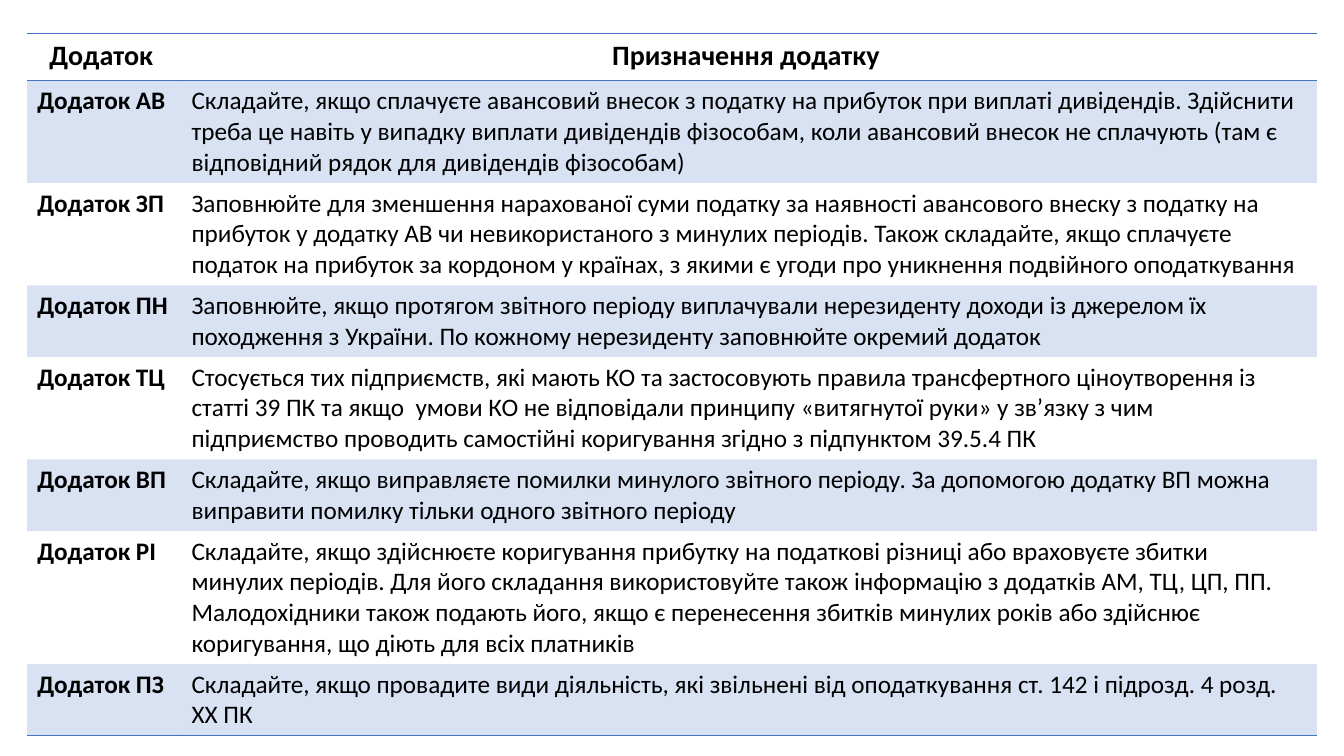
"""Build a one-slide table of tax return annexes and their purposes."""
from dataclasses import dataclass

import lxml.etree
import pptx
import pptx.dml.color
import pptx.enum.text
import pptx.oxml.ns
import pptx.util


@dataclass(frozen=True)
class Theme:
    """Colours, type sizes and table style of the slide."""
    font: str = "Calibri"
    ink: str = "000000"
    accent: str = "4472C4"
    band_alpha: int = 20
    header_size: int = 20
    body_size: int = 18
    rule_width: int = 1
    plain_style: str = "{2D5ABB26-0587-4C30-8999-92F81FD0307C}"


THEME = Theme()
SLIDE_SIZE = (13.33, 7.5)
TABLE_ORIGIN = (0.27, 0.33)
COLUMNS = (1.53, 11.26)
HEADER_HEIGHT = 0.47
LINE_HEIGHT = 0.3
ROW_PADDING = 0.1

HEADERS = ("Додаток ", "Призначення додатку ")
ANNEXES = (
    ("АВ", 3, (
        "Складайте, якщо сплачуєте авансовий внесок з податку на прибуток "
        "при виплаті дивідендів. Здійснити треба це навіть у випадку "
        "виплати дивідендів фізособам, коли авансовий внесок не сплачують "
        "(там є відповідний рядок для дивідендів фізособам)",)),
    ("ЗП", 3, (
        "Заповнюйте для зменшення нарахованої суми податку за наявності "
        "авансового внеску з податку на прибуток у додатку АВ чи "
        "невикористаного з минулих періодів. Також складайте, якщо сплачуєте "
        "податок на прибуток за кордоном у країнах, з якими є угоди про "
        "уникнення подвійного оподаткування",)),
    ("ПН", 2, (
        "Заповнюйте, якщо протягом звітного періоду виплачували нерезиденту "
        "доходи із джерелом їх походження з України. По кожному нерезиденту "
        "заповнюйте окремий додаток",)),
    ("ТЦ", 3, (
        "Стосується тих підприємств, які мають КО та застосовують правила "
        "трансфертного ціноутворення із статті 39 ПК та якщо  умови КО не "
        "відповідали принципу «витягнутої руки» у зв’язку з чим підприємство "
        "проводить самостійні коригування згідно з підпунктом 39.5.4 ПК",)),
    ("ВП", 2, (
        "Складайте, якщо виправляєте помилки минулого звітного періоду. За "
        "допомогою додатку ВП можна виправити помилку тільки одного звітного "
        "періоду",)),
    ("РІ", 4, (
        "Складайте, якщо здійснюєте коригування прибутку на податкові різниці "
        "або враховуєте збитки минулих періодів. Для його складання "
        "використовуйте також інформацію з додатків АМ, ТЦ, ЦП, ПП.",
        "Малодохідники також подають його, якщо є перенесення збитків минулих "
        "років або здійснює коригування, що діють для всіх платників")),
    ("ПЗ", 2, (
        "Складайте, якщо провадите види діяльність, які звільнені від "
        "оподаткування ст. 142 і підрозд. 4 розд. ХХ ПК",)),
)


def write(tf, paragraphs, size=THEME.body_size, bold=False, align="LEFT"):
    """Fill a text frame with formatted paragraphs."""
    for i, text in enumerate(paragraphs):
        p = tf.add_paragraph() if i else tf.paragraphs[0]
        p.alignment = getattr(pptx.enum.text.PP_ALIGN, align)
        r = p.add_run()
        r.text = text
        r.font.name = THEME.font
        r.font.size = pptx.util.Pt(size)
        r.font.bold = bold
        r.font.color.rgb = pptx.dml.color.RGBColor.from_string(THEME.ink)


def add_rule(cell, edge):
    """Draw an accent border on the T or B edge of a cell."""
    qn = pptx.oxml.ns.qn
    ln = lxml.etree.SubElement(cell._tc.get_or_add_tcPr(), qn(f"a:ln{edge}"),
                               w=str(pptx.util.Pt(THEME.rule_width)))
    fill = lxml.etree.SubElement(ln, qn("a:solidFill"))
    lxml.etree.SubElement(fill, qn("a:srgbClr"), val=THEME.accent)


def fill_band(cell, banded):
    """Tint a banded cell with the translucent accent, or leave it clear."""
    if not banded:
        cell.fill.background()
        return
    cell.fill.solid()
    cell.fill.fore_color.rgb = pptx.dml.color.RGBColor.from_string(THEME.accent)
    qn = pptx.oxml.ns.qn
    colour = cell._tc.tcPr.find(f"{qn('a:solidFill')}/{qn('a:srgbClr')}")
    lxml.etree.SubElement(colour, qn("a:alpha"),
                          val=str(THEME.band_alpha * 1000))


def add_annex_table(s):
    """Add the table with sized columns and rows."""
    heights = [HEADER_HEIGHT] + [ROW_PADDING + LINE_HEIGHT * lines
                                 for _, lines, _ in ANNEXES]
    box = (*TABLE_ORIGIN, sum(COLUMNS), sum(heights))
    sp = s.shapes.add_table(len(heights), len(COLUMNS),
                            *map(pptx.util.Inches, box))
    table = sp.table
    style = table._tbl.tblPr.find(pptx.oxml.ns.qn("a:tableStyleId"))
    style.text = THEME.plain_style
    for column, width in zip(table.columns, COLUMNS):
        column.width = pptx.util.Inches(width)
    for row, height in zip(table.rows, heights):
        row.height = pptx.util.Inches(height)
    return table


def fill_table(table):
    """Write the header and annex rows, then their rules and bands."""
    for cell, header in zip(table.rows[0].cells, HEADERS):
        write(cell.text_frame, [header], size=THEME.header_size, bold=True,
              align="CENTER")
    for i, (code, _, purpose) in enumerate(ANNEXES, start=1):
        write(table.cell(i, 0).text_frame, [f"Додаток {code}"], bold=True)
        write(table.cell(i, 1).text_frame, purpose)
    edges = {0: "TB", len(ANNEXES): "B"}
    for i, row in enumerate(table.rows):
        for cell in row.cells:
            for edge in edges.get(i, ""):
                add_rule(cell, edge)
            fill_band(cell, banded=i % 2 == 1)


def main():
    """Build and save the slide."""
    prs = pptx.Presentation()
    prs.slide_width, prs.slide_height = map(pptx.util.Inches, SLIDE_SIZE)
    s = prs.slides.add_slide(prs.slide_layouts[6])
    fill_table(add_annex_table(s))
    prs.save("out.pptx")


if __name__ == "__main__":
    main()
